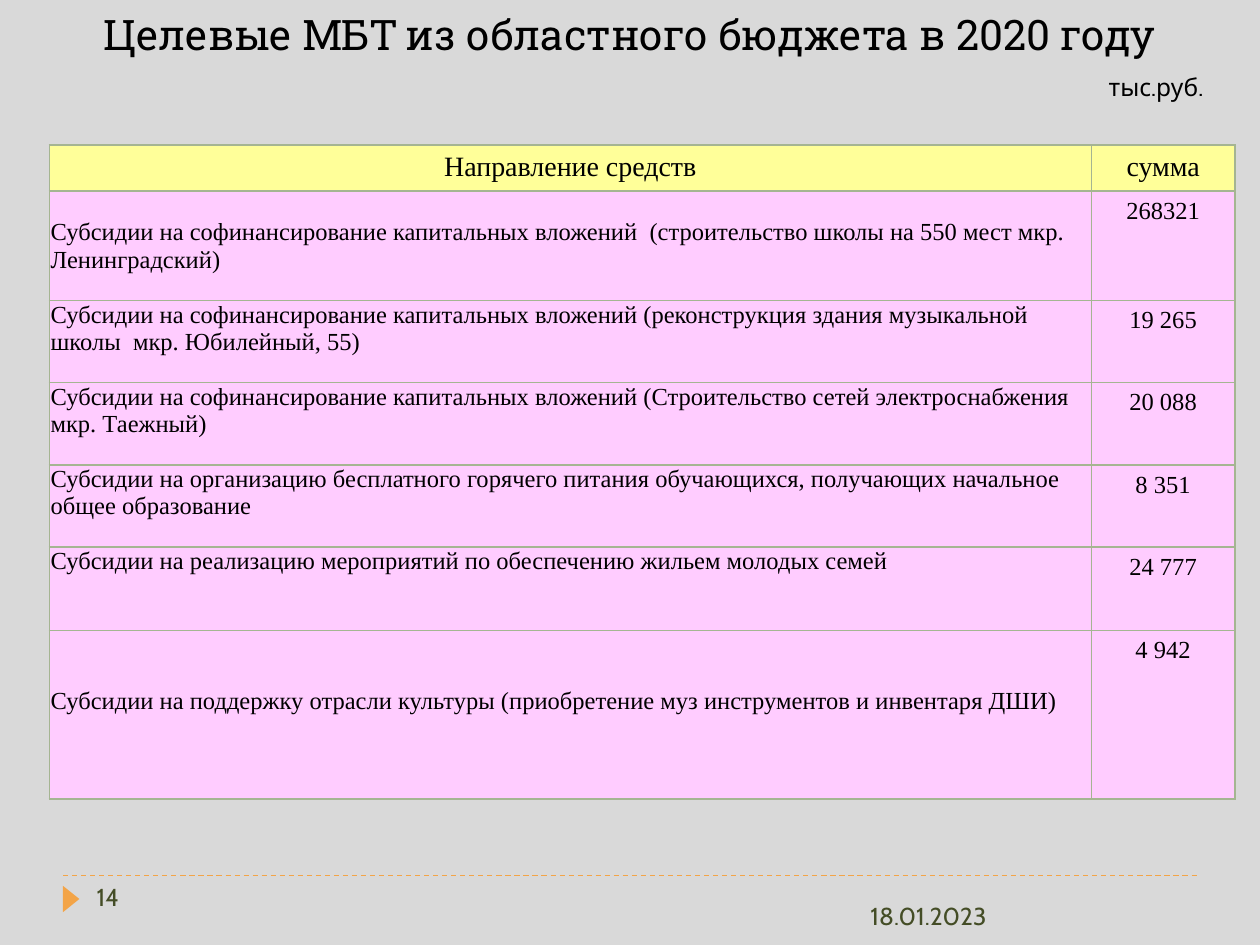
from lxml import etree
from pptx import Presentation
from pptx.dml.color import RGBColor
from pptx.enum.dml import MSO_LINE
from pptx.enum.shapes import MSO_CONNECTOR, MSO_SHAPE
from pptx.enum.text import MSO_ANCHOR, MSO_AUTO_SIZE, PP_ALIGN
from pptx.oxml.ns import qn
from pptx.util import Pt

LEFT, CENTER = PP_ALIGN.LEFT, PP_ALIGN.CENTER
TOP, MIDDLE, BOTTOM = MSO_ANCHOR.TOP, MSO_ANCHOR.MIDDLE, MSO_ANCHOR.BOTTOM
NO_FIT = MSO_AUTO_SIZE.NONE
STRAIGHT, TRIANGLE, DASH = MSO_CONNECTOR.STRAIGHT, MSO_SHAPE.ISOSCELES_TRIANGLE, MSO_LINE.DASH

GREY = RGBColor(0xD9, 0xD9, 0xD9)
BLACK = RGBColor(0, 0, 0)
OLIVE = RGBColor(0x44, 0x4D, 0x26)
ORANGE = RGBColor(0xF3, 0xA4, 0x47)
YELLOW = RGBColor(0xFF, 0xFF, 0x99)
PINK = RGBColor(0xFF, 0xCC, 0xFF)
GREEN = RGBColor(0xA5, 0xB5, 0x92)

HEADER = ("Направление средств", "сумма")
# Purpose, sum, row height, top margin, bottom margin, anchor
ROWS = [
    ("Субсидии на софинансирование капитальных вложений  (строительство школы на 550 мест мкр. Ленинградский)",
     "268321", 62.5, 16, 0, TOP),
    ("Субсидии на софинансирование капитальных вложений (реконструкция здания музыкальной школы  мкр. Юбилейный, 55)",
     "19 265", 47, 0.5, 0, TOP),
    ("Субсидии на софинансирование капитальных вложений (Строительство сетей электроснабжения  мкр. Таежный)",
     "20 088", 47, 0.5, 0, TOP),
    ("Субсидии на организацию бесплатного горячего питания обучающихся, получающих начальное общее образование",
     "8 351", 47, 0.5, 0, TOP),
    ("Субсидии на реализацию мероприятий по обеспечению жильем молодых семей",
     "24 777", 47.5, 0.5, 0, TOP),
    ("Субсидии на поддержку отрасли культуры (приобретение муз инструментов и инвентаря ДШИ)",
     "4 942", 96.5, 0.5, 16, MIDDLE),
]


class Deck:
    """Holds the style and the current slide."""
    heading, body, serif = "Roboto Slab", "Cabin", "Times New Roman"

    def __init__(self, width, height):
        self.prs = Presentation()
        self.prs.slide_width, self.prs.slide_height = Pt(width), Pt(height)
        self.s = self.prs.slides.add_slide(self.prs.slide_layouts[5])
        self.s.background.fill.solid()
        self.s.background.fill.fore_color.rgb = GREY

    def text(self, tf, text, font, size, color=BLACK, align=LEFT):
        p = tf.paragraphs[0]
        p.alignment = align
        r = p.add_run()
        r.text = text
        r.font.name, r.font.size, r.font.color.rgb = font, Pt(size), color

    def title(self, text, x, y, w, h):
        sp = self.s.shapes.title
        sp.left, sp.top, sp.width, sp.height = Pt(x), Pt(y), Pt(w), Pt(h)
        tf = sp.text_frame
        tf.auto_size, tf.vertical_anchor = NO_FIT, BOTTOM
        self.text(tf, text, self.heading, 24, align=CENTER)

    def label(self, text, x, y, w, h, color=BLACK):
        tf = self.s.shapes.add_textbox(Pt(x), Pt(y), Pt(w), Pt(h)).text_frame
        tf.word_wrap = True
        self.text(tf, text, self.body, 14, color)

    def rule(self, x1, x2, y):
        line = self.s.shapes.add_connector(STRAIGHT, Pt(x1), Pt(y), Pt(x2), Pt(y))
        line.line.color.rgb, line.line.width, line.line.dash_style = ORANGE, Pt(0.75), DASH
        etree.SubElement(line._element.spPr, qn("a:effectLst"))

    def marker(self, x, y, w, h):
        sp = self.s.shapes.add_shape(TRIANGLE, Pt(x), Pt(y), Pt(w), Pt(h))
        sp.rotation = 90
        sp.shadow.inherit = False
        sp.fill.solid()
        sp.fill.fore_color.rgb = ORANGE
        sp.line.fill.background()

    def cell(self, cell, text, size, fill, align=CENTER):
        self.text(cell.text_frame, text, self.serif, size, align=align)
        # Borders come before the fill in the cell properties
        tcPr = cell._tc.get_or_add_tcPr()
        for side in ("a:lnL", "a:lnR", "a:lnT", "a:lnB"):
            ln = etree.SubElement(tcPr, qn(side), w=str(Pt(1)))
            solid = etree.SubElement(ln, qn("a:solidFill"))
            etree.SubElement(solid, qn("a:srgbClr"), val=str(GREEN))
        cell.fill.solid()
        cell.fill.fore_color.rgb = fill

    def table(self, x, y, widths, header_height):
        heights = [header_height] + [row[2] for row in ROWS]
        tbl = self.s.shapes.add_table(len(heights), len(widths), Pt(x), Pt(y),
                                      Pt(sum(widths)), Pt(sum(heights))).table
        for col, w in zip(tbl.columns, widths):
            col.width = Pt(w)
        for row, h in zip(tbl.rows, heights):
            row.height = Pt(h)
        for c, text in enumerate(HEADER):
            self.cell(tbl.cell(0, c), text, 16, YELLOW)
        for i, (purpose, amount, _, above, below, anchor) in enumerate(ROWS, 1):
            cell = tbl.cell(i, 0)
            cell.margin_left = cell.margin_right = Pt(0.7)
            cell.margin_top, cell.margin_bottom = Pt(above), Pt(below)
            cell.vertical_anchor = anchor
            self.cell(cell, purpose, 14, PINK, LEFT)
            self.cell(tbl.cell(i, 1), amount, 14, PINK)


def main():
    d = Deck(720, 540)
    # Footer
    d.rule(36, 684, 500.4)
    d.marker(33.1, 509, 15.1, 9.4)
    d.label("18.01.2023", 490.3, 511.2, 180, 28.8, OLIVE)
    d.label("14", 48.2, 500.4, 156, 28.8, OLIVE)
    # Heading and unit
    d.title("Целевые МБТ из областного бюджета в 2020 году", 36, 0, 647, 37.4)
    d.label("тыс.руб.", 626.4, 37.4, 79.2, 24.5)
    # Transfers
    d.table(28.2, 82.8, (595.4, 82.1), 25.2)
    d.prs.save("out.pptx")


if __name__ == "__main__":
    main()
